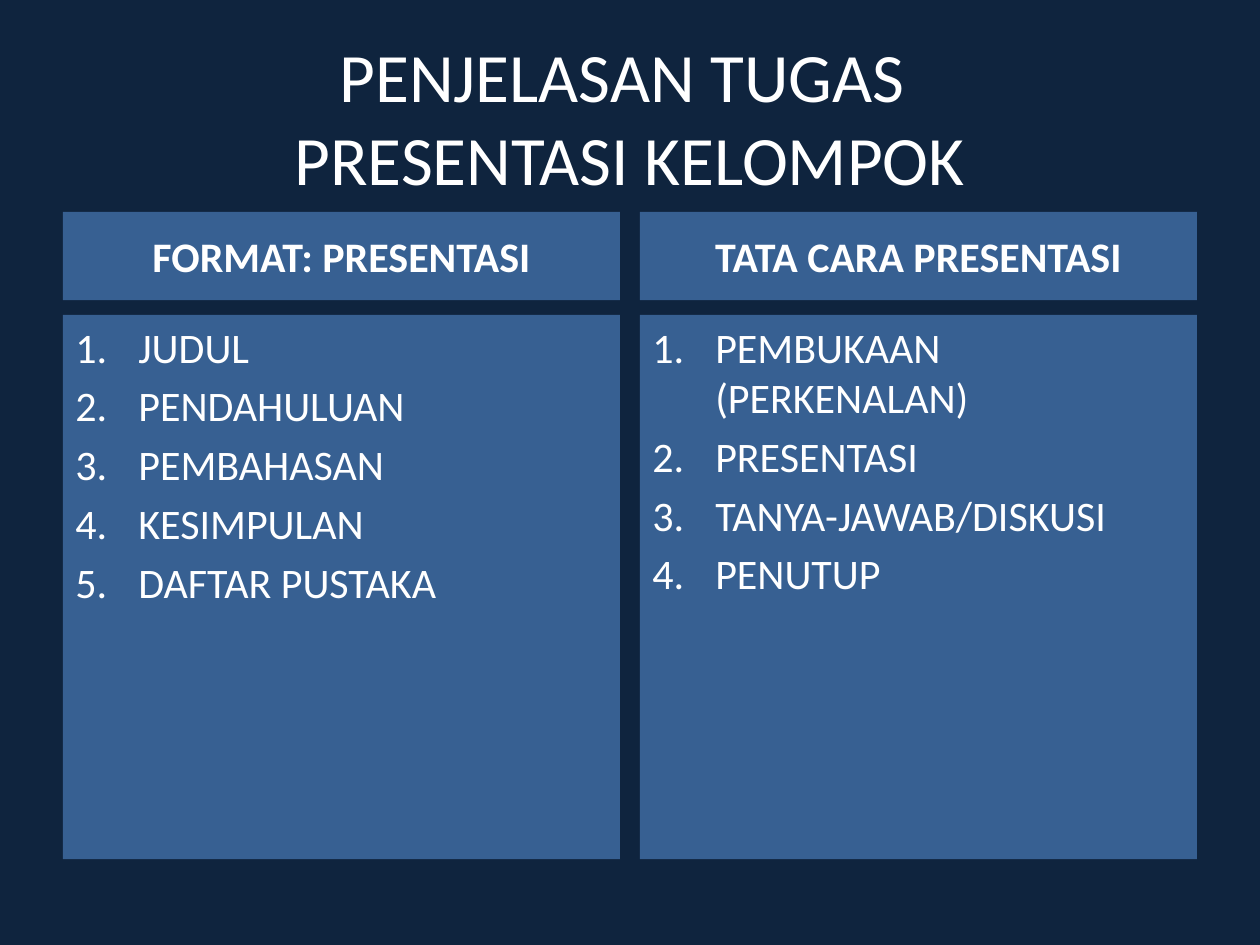
from dataclasses import dataclass

from lxml import etree
from pptx import Presentation
from pptx import util as u
from pptx.dml.color import RGBColor
from pptx.enum import shapes, text
from pptx.oxml.ns import qn

NAVY, BLUE, WHITE = "0F243E", "376092", "FFFFFF"
MARGIN, COL_W, COL_GAP = 1.27, 11.23, 0.4
HEAD_TOP, HEAD_H = 4.27, 1.78
LIST_TOP, LIST_H = 6.35, 10.97
INDENT = u.Cm(1.27)


@dataclass
class Column:
    heading: str
    items: list[str]


COLUMNS = [
    Column("FORMAT: PRESENTASI",
           ["JUDUL", "PENDAHULUAN", "PEMBAHASAN", "KESIMPULAN", "DAFTAR PUSTAKA"]),
    Column("TATA CARA PRESENTASI",
           ["PEMBUKAAN (PERKENALAN)", "PRESENTASI", "TANYA-JAWAB/DISKUSI", "PENUTUP"]),
]


def paint(fill, color: str) -> None:
    fill.solid()
    fill.fore_color.rgb = RGBColor.from_string(color)


def write(tf, lines: list[str], size: float, anchor, align,
          bold: bool = False, before: float = 0) -> None:
    """Fill a text frame with one paragraph per line."""
    tf.word_wrap = True
    tf.vertical_anchor = anchor
    tf.text = "\n".join(lines)
    font = {"name": "Calibri", "size": u.Pt(size), "bold": bold}
    for p in tf.paragraphs:
        p.alignment = align
        p.space_before = u.Pt(before)
        for r in p.runs:
            for key, value in font.items():
                setattr(r.font, key, value)
            paint(r.font.fill, WHITE)


def number(tf) -> None:
    """Number the paragraphs with a hanging indent."""
    for p in tf.paragraphs:
        pPr = p._p.get_or_add_pPr()
        pPr.set("marL", str(INDENT))
        pPr.set("indent", str(-INDENT))
        etree.SubElement(pPr, qn("a:buFont"), typeface="+mj-lt")
        etree.SubElement(pPr, qn("a:buAutoNum"), type="arabicPeriod")


def add_panel(s, left: float, top: float, height: float):
    sp = s.shapes.add_shape(shapes.MSO_SHAPE.RECTANGLE, u.Cm(left), u.Cm(top),
                            u.Cm(COL_W), u.Cm(height))
    sp.shadow.inherit = False
    paint(sp.fill, BLUE)
    sp.line.fill.background()
    return sp.text_frame


def add_column(s, left: float, column: Column) -> None:
    tf = add_panel(s, left, HEAD_TOP, HEAD_H)
    write(tf, [column.heading], 24, text.MSO_ANCHOR.MIDDLE, text.PP_ALIGN.CENTER,
          bold=True, before=4.8)
    tf = add_panel(s, left, LIST_TOP, LIST_H)
    write(tf, column.items, 24, text.MSO_ANCHOR.TOP, text.PP_ALIGN.LEFT, before=4.8)
    number(tf)


def main() -> None:
    prs = Presentation()
    prs.slide_width, prs.slide_height = u.Cm(25.4), u.Cm(19.05)
    s = prs.slides.add_slide(prs.slide_layouts[6])
    paint(s.background.fill, NAVY)

    # Title
    sp = s.shapes.add_textbox(u.Cm(MARGIN), u.Cm(0.76), u.Cm(22.86), u.Cm(3.18))
    write(sp.text_frame, ["PENJELASAN TUGAS \vPRESENTASI KELOMPOK"], 39.6,
          text.MSO_ANCHOR.MIDDLE, text.PP_ALIGN.CENTER)

    # Two columns: heading above numbered list
    for i, column in enumerate(COLUMNS):
        add_column(s, MARGIN + i * (COL_W + COL_GAP), column)

    prs.save("out.pptx")


if __name__ == "__main__":
    main()
